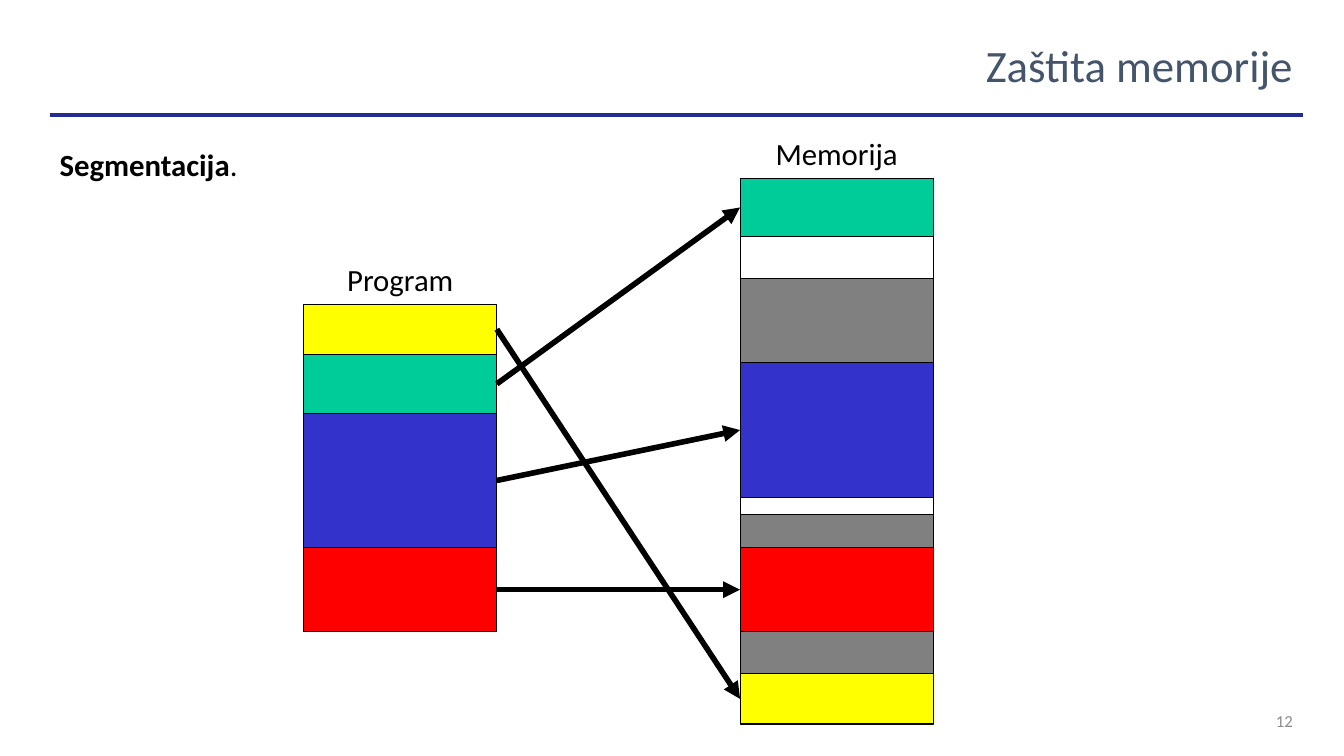
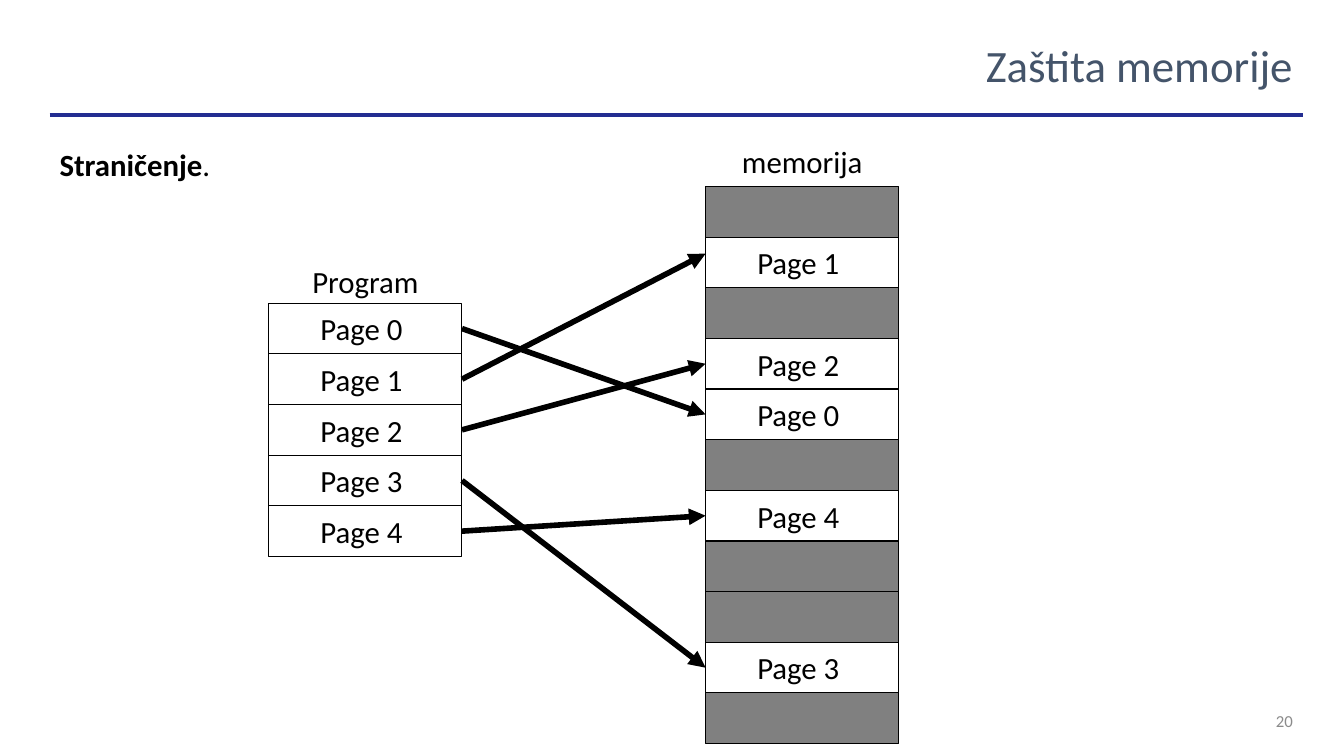
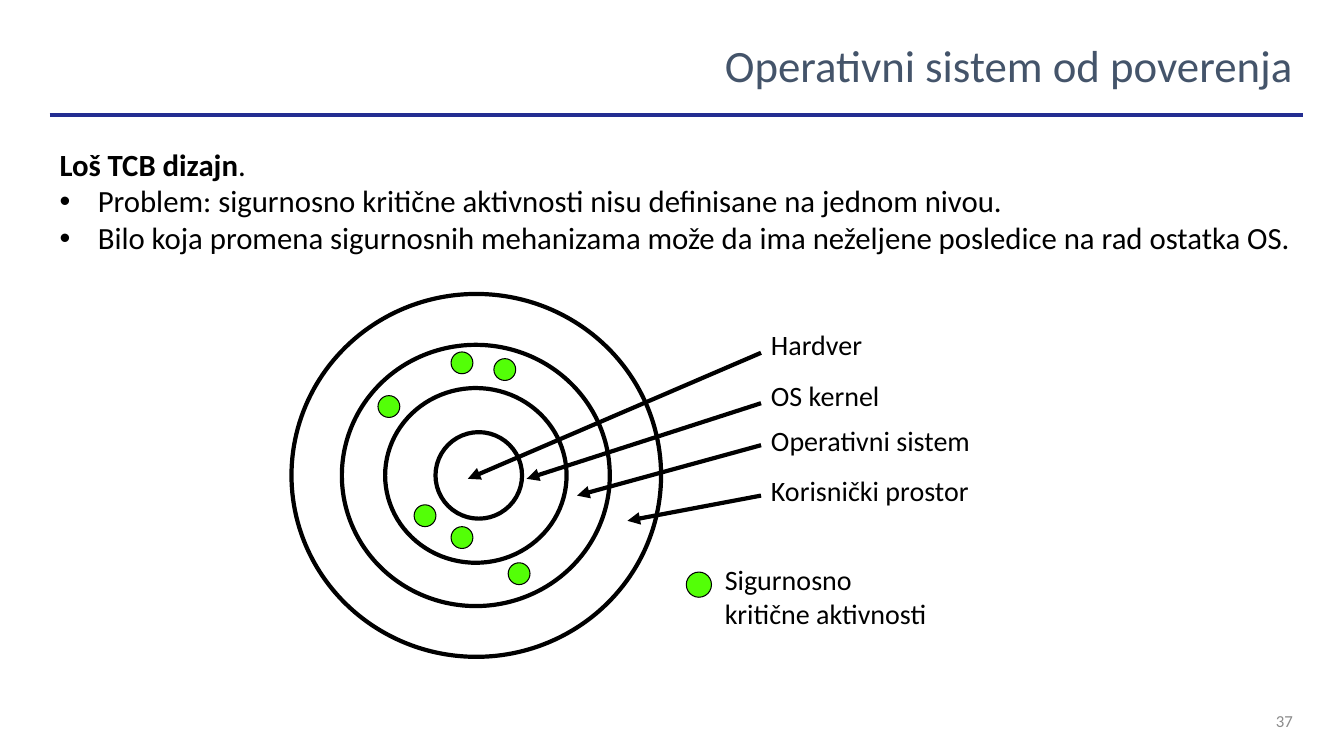
from dataclasses import dataclass

from lxml.etree import SubElement
from pptx import Presentation
from pptx.dml.color import RGBColor
from pptx.enum.shapes import MSO_CONNECTOR as Connector, MSO_SHAPE as Shape
from pptx.enum.text import MSO_ANCHOR as Anchor, PP_ALIGN as Align
from pptx.oxml.ns import qn
from pptx.util import Inches, Pt

COLS, ROWS = 160, 90  # square grid cells, twelve to the inch
RIGHT, LEFT = 3, 1    # connection sites of a rectangle


@dataclass(frozen=True)
class Theme:
    font: str = "Calibri"
    title: str = "44546A"
    rule: str = "232D91"
    number: str = "8B8B8B"
    ink: str = "000000"
    used: str = "808080"
    yellow: str = "FFFF00"
    green: str = "00CC99"
    blue: str = "3333CC"
    red: str = "FF0000"
    critical: str = "53FF07"
    title_size: float = 32
    body_size: float = 22
    label_size: float = 20
    number_size: float = 12
    hairline: float = 0.75
    thick: float = 3
    arrow: float = 4


THEME = Theme()


def write(frame, paragraphs, size=THEME.body_size, color=THEME.ink, align=Align.LEFT,
          anchor=Anchor.TOP, wrap=True, bullets_from=None, indent=0.38):
    """Fill a text frame; a paragraph is a string or a list of (text, bold) runs."""
    frame.word_wrap = wrap
    frame.vertical_anchor = anchor
    for index, content in enumerate(paragraphs):
        paragraph = frame.paragraphs[0] if index == 0 else frame.add_paragraph()
        paragraph.alignment = align
        runs = [(content, False)] if isinstance(content, str) else content
        for text, bold in runs:
            run = paragraph.add_run()
            run.text = text
            run.font.name, run.font.size, run.font.bold = THEME.font, Pt(size), bold
            run.font.color.rgb = RGBColor.from_string(color)
        if bullets_from is not None and index >= bullets_from:
            properties = paragraph._p.get_or_add_pPr()
            properties.set("marL", str(Inches(indent)))
            properties.set("indent", str(-Inches(indent)))
            SubElement(properties, qn("a:buFont"), typeface="Arial")
            SubElement(properties, qn("a:buChar"), char="•")


class Deck:
    def __init__(self):
        self.show = Presentation()
        self.show.slide_width, self.show.slide_height = Inches(13.33), Inches(7.5)
        self.slide = None

    def x(self, cols):
        return round(self.show.slide_width * cols / COLS)

    def y(self, rows):
        return round(self.show.slide_height * rows / ROWS)

    def box(self, col, row, width, height):
        return self.x(col), self.y(row), self.x(width), self.y(height)

    def page(self, title, number, topic, bullets=()):
        """Start a slide with its title, rule, number and body text."""
        self.slide = self.show.slides.add_slide(self.show.slide_layouts[6])
        self.text([title], 5.9, 3.4, 149.2, 8.6, size=THEME.title_size,
                  color=THEME.title, align=Align.RIGHT, anchor=Anchor.MIDDLE)
        self.text([str(number)], 148.1, 83.4, 7, 4.8, size=THEME.number_size,
                  color=THEME.number, align=Align.RIGHT, anchor=Anchor.MIDDLE)
        self.line((5.9, 13.7), (155.1, 13.7), THEME.rule, THEME.thick)
        self.text([[(topic, True), (".", False)], *bullets], 5.9, 16.7, 149.2, 63.7,
                  bullets_from=1)

    def text(self, paragraphs, col, row, width, height, **style):
        area = self.slide.shapes.add_textbox(*self.box(col, row, width, height))
        write(area.text_frame, paragraphs, **style)

    def shape(self, kind, col, row, width, height, fill=None, weight=THEME.hairline):
        figure = self.slide.shapes.add_shape(kind, *self.box(col, row, width, height))
        figure.shadow.inherit = False
        if fill:
            figure.fill.solid()
            figure.fill.fore_color.rgb = RGBColor.from_string(fill)
        else:
            figure.fill.background()
        figure.line.color.rgb = RGBColor.from_string(THEME.ink)
        figure.line.width = Pt(weight)
        return figure

    def line(self, start, end, color=THEME.ink, weight=THEME.thick, head=False):
        stroke = self.slide.shapes.add_connector(
            Connector.STRAIGHT, self.x(start[0]), self.y(start[1]),
            self.x(end[0]), self.y(end[1]))
        stroke.line.color.rgb = RGBColor.from_string(color)
        stroke.line.width = Pt(weight)
        if head:
            SubElement(stroke.line._get_or_add_ln(), qn("a:tailEnd"), type="triangle")
        SubElement(stroke._element.spPr, qn("a:effectLst"))
        return stroke

    def link(self, source, target, end=None):
        """Arrow from a block's right side to another's left side, or to a point."""
        arrow = self.line((0, 0), end or (0, 0), weight=THEME.arrow, head=True)
        arrow.begin_connect(source, RIGHT)
        if end is None:
            arrow.end_connect(target, LEFT)

    def column(self, heading, heading_row, col, row, segments, width=23):
        """Stack (name, height, fill) segments; return the named blocks."""
        self.text([heading], col, heading_row, width, 5.6, align=Align.CENTER)
        blocks = {}
        for name, height, fill in segments:
            if name != "free":
                blocks[name] = self.shape(Shape.RECTANGLE, col, row, width, height, fill)
                if name.startswith("Page"):
                    frame = blocks[name].text_frame
                    frame.margin_left = self.x(6.15)
                    frame.margin_top = frame.margin_bottom = 0
                    write(frame, [name], anchor=Anchor.MIDDLE, wrap=True)
            row += height
        return blocks

    def circle(self, center_col, center_row, width, height, **style):
        self.shape(Shape.OVAL, center_col - width / 2, center_row - height / 2,
                   width, height, **style)


def segmentation(deck):
    deck.page("Zaštita memorije", 12, "Segmentacija")
    yellow = ("yellow", 6, THEME.yellow)
    green = ("green", 7, THEME.green)
    blue = ("blue", 16, THEME.blue)
    red = ("red", 10, THEME.red)

    def used(height):
        return "used", height, THEME.used

    def free(height):
        return "free", height, None

    program = deck.column("Program", 30.5, 36.15, 36.2, [yellow, green, blue, red])
    deck.shape(Shape.RECTANGLE, 88.1, 21.2, 23, 65)
    memory = deck.column("Memorija", 15.4, 88.1, 21.2, [
        green, free(5), used(10), blue, free(2), used(4), red, used(5), yellow])
    for name, block in program.items():
        deck.link(block, memory[name])


def paging(deck):
    deck.page("Zaštita memorije", 20, "Straničenje")
    page_height = 6.03
    program = deck.column("Program", 30.7, 32, 36.1, [
        (f"Page {number}", page_height, None) for number in range(5)])
    # Page number held by each memory frame; None is taken by others
    frames = [None, 1, None, 2, 0, None, 4, None, None, 3, None]
    memory = deck.column("memorija", 16.4, 84, 22.2, [
        ("used", page_height, THEME.used) if number is None
        else (f"Page {number}", page_height, None) for number in frames])
    for name, block in program.items():
        deck.link(block, memory[name], end=(84, 30.2) if name == "Page 1" else None)


def trusted_base(deck):
    deck.page("Operativni sistem od poverenja", 37, "Loš TCB dizajn", [
        "Problem: sigurnosno kritične aktivnosti nisu definisane na jednom nivou.",
        "Bilo koja promena sigurnosnih mehanizama može da ima neželjene posledice "
        "na rad ostatka OS."])

    # Rings, from the hardware outwards
    for center, width, height in [(57, 10.3, 10.3), (56.65, 21.6, 20.8),
                                  (56.65, 31.9, 31.1), (56.7, 44, 43.2)]:
        deck.circle(center, 56.6, width, height, weight=THEME.thick)

    # Security-critical activities, with the legend's dot last
    for col, row, size in [(60.1, 44, 2.6), (50.6, 61.4, 2.6), (46.3, 48.4, 2.6),
                           (55, 43.2, 2.6), (61.8, 68.3, 2.6), (55, 64, 2.6),
                           (83.2, 69.6, 3)]:
        deck.circle(col, row, size, size, fill=THEME.critical)
    deck.text(["Sigurnosno", "kritične aktivnosti"], 85.1, 66.4, 26.8, 9.2,
              size=THEME.label_size, wrap=False)

    # Ring names: label row, label width, arrow start row, arrow tip
    for name, row, width, start, tip in [
            ("Hardver", 38.4, 13.4, 42, (55.7, 57)),
            ("OS kernel", 44.5, 15.5, 48, (62.7, 57)),
            ("Operativni sistem", 49.8, 26.4, 53, (68.7, 59)),
            ("Korisnički prostor", 55.8, 26.2, 59, (74.7, 62))]:
        deck.text([name], 90.6, row, width, 5.3, size=THEME.label_size, wrap=False)
        deck.line((90.6, start), tip, head=True)


def main():
    deck = Deck()
    for build in (segmentation, paging, trusted_base):
        build(deck)
    deck.show.save("out.pptx")


if __name__ == "__main__":
    main()
